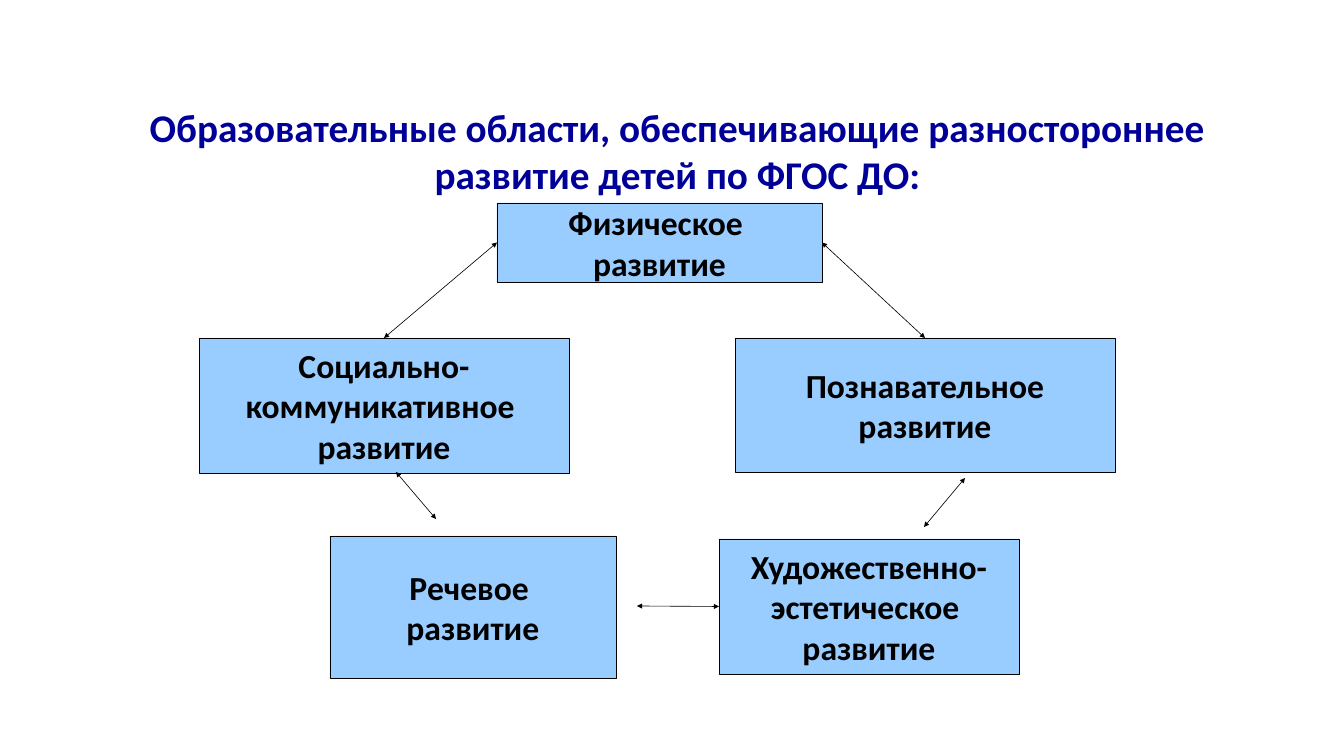
"""Build a slide showing the five linked educational areas of child development."""
import pptx
import pptx.dml.color
import pptx.enum.shapes
import pptx.enum.text
import pptx.oxml.ns
import pptx.util
from lxml import etree

EMU_PER_PX = 914400 / 61.1
THEME = {
    "font": "Calibri",
    "title_size": pptx.util.Pt(46.2),
    "box_size": pptx.util.Pt(39.6),
    "title_color": pptx.dml.color.RGBColor.from_string("000099"),
    "box_fill": pptx.dml.color.RGBColor.from_string("99CCFF"),
    "ink": pptx.dml.color.RGBColor.from_string("000000"),
    "line_width": pptx.util.Pt(0.75),
}


def px(*lengths):
    return [pptx.util.Emu(round(length * EMU_PER_PX)) for length in lengths]


def format_paragraph(paragraph, size, color):
    paragraph.alignment = pptx.enum.text.PP_ALIGN.CENTER
    paragraph.font.name = THEME["font"]
    paragraph.font.size = size
    paragraph.font.bold = True
    paragraph.font.color.rgb = color


presentation = pptx.Presentation()
presentation.slide_width, presentation.slide_height = px(1344, 756)
slide = presentation.slides.add_slide(presentation.slide_layouts.get_by_name("Title Only"))

title = slide.shapes.title
title.left, title.top, title.width, title.height = px(112, 103, 1131, 290)
title_frame = title.text_frame
title_frame.text = "Образовательные области, обеспечивающие разностороннее развитие детей по ФГОС ДО:"
title_frame.word_wrap = True
title_frame.auto_size = pptx.enum.text.MSO_AUTO_SIZE.NONE
title_frame.vertical_anchor = pptx.enum.text.MSO_ANCHOR.TOP
title_frame.margin_left = title_frame.margin_right = 0
title_frame.margin_top = title_frame.margin_bottom = 0
format_paragraph(title_frame.paragraphs[0], THEME["title_size"], THEME["title_color"])

areas = {
    "physical": ("Физическое \nразвитие", 497, 203, 325, 79),
    "artistic": ("Художественно-\nэстетическое \nразвитие", 719, 539, 300, 135),
    "cognitive": ("Познавательное\nразвитие", 735, 338, 380, 134),
    "speech": ("Речевое \nразвитие", 330, 536, 286, 142),
    "social": ("Социально-\nкоммуникативное \nразвитие", 199, 338, 370, 135),
}
boxes = {}
for area, (text, *bounds) in areas.items():
    box = slide.shapes.add_shape(pptx.enum.shapes.MSO_SHAPE.RECTANGLE, *px(*bounds))
    box.shadow.inherit = False
    box.fill.solid()
    box.fill.fore_color.rgb = THEME["box_fill"]
    box.line.color.rgb = THEME["ink"]
    box.line.width = THEME["line_width"]
    box.text_frame.text = text
    box.text_frame.word_wrap = False
    box.text_frame.vertical_anchor = pptx.enum.text.MSO_ANCHOR.MIDDLE
    for paragraph in box.text_frame.paragraphs:
        format_paragraph(paragraph, THEME["box_size"], THEME["ink"])
    boxes[area] = box

arrows = [
    ((497, 243), (384, 338), ("physical", 1), ("social", 0)),
    ((822, 243), (925, 338), ("physical", 3), ("cognitive", 0)),
    ((396, 472), (436, 519), None, None),
    ((637, 606), (719, 606), None, ("artistic", 1)),
    ((924, 527), (965, 478), None, None),
]
for start, end, start_joint, end_joint in arrows:
    arrow = slide.shapes.add_connector(
        pptx.enum.shapes.MSO_CONNECTOR.STRAIGHT, *px(*start, *end)
    )
    if start_joint:
        arrow.begin_connect(boxes[start_joint[0]], start_joint[1])
    if end_joint:
        arrow.end_connect(boxes[end_joint[0]], end_joint[1])
    arrow.line.color.rgb = THEME["ink"]
    arrow.line.width = THEME["line_width"]
    properties = arrow.element.spPr
    outline = properties.find(pptx.oxml.ns.qn("a:ln"))
    for arrowhead in ("a:headEnd", "a:tailEnd"):
        etree.SubElement(outline, pptx.oxml.ns.qn(arrowhead), type="triangle")
    etree.SubElement(properties, pptx.oxml.ns.qn("a:effectLst"))

presentation.save("out.pptx")
